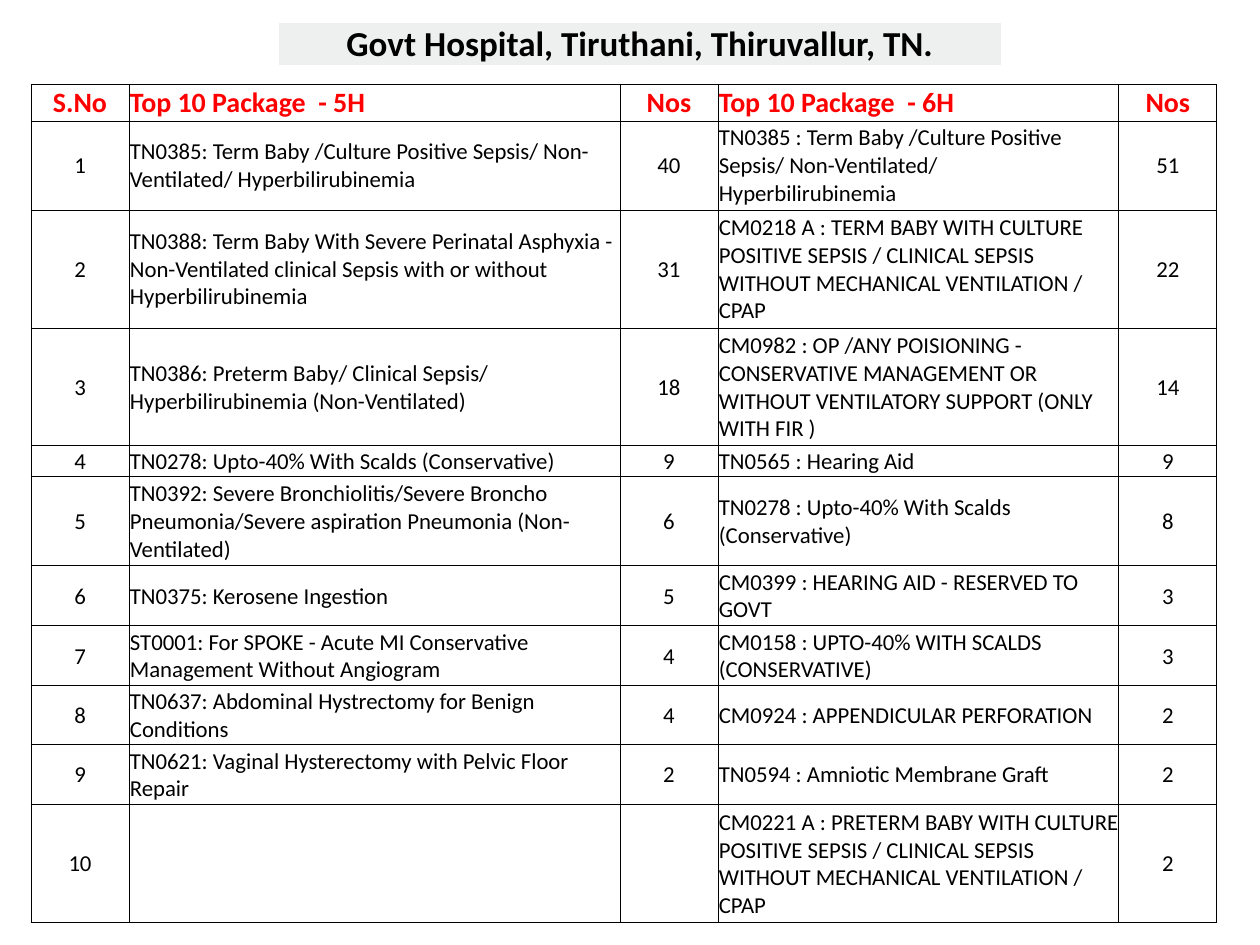
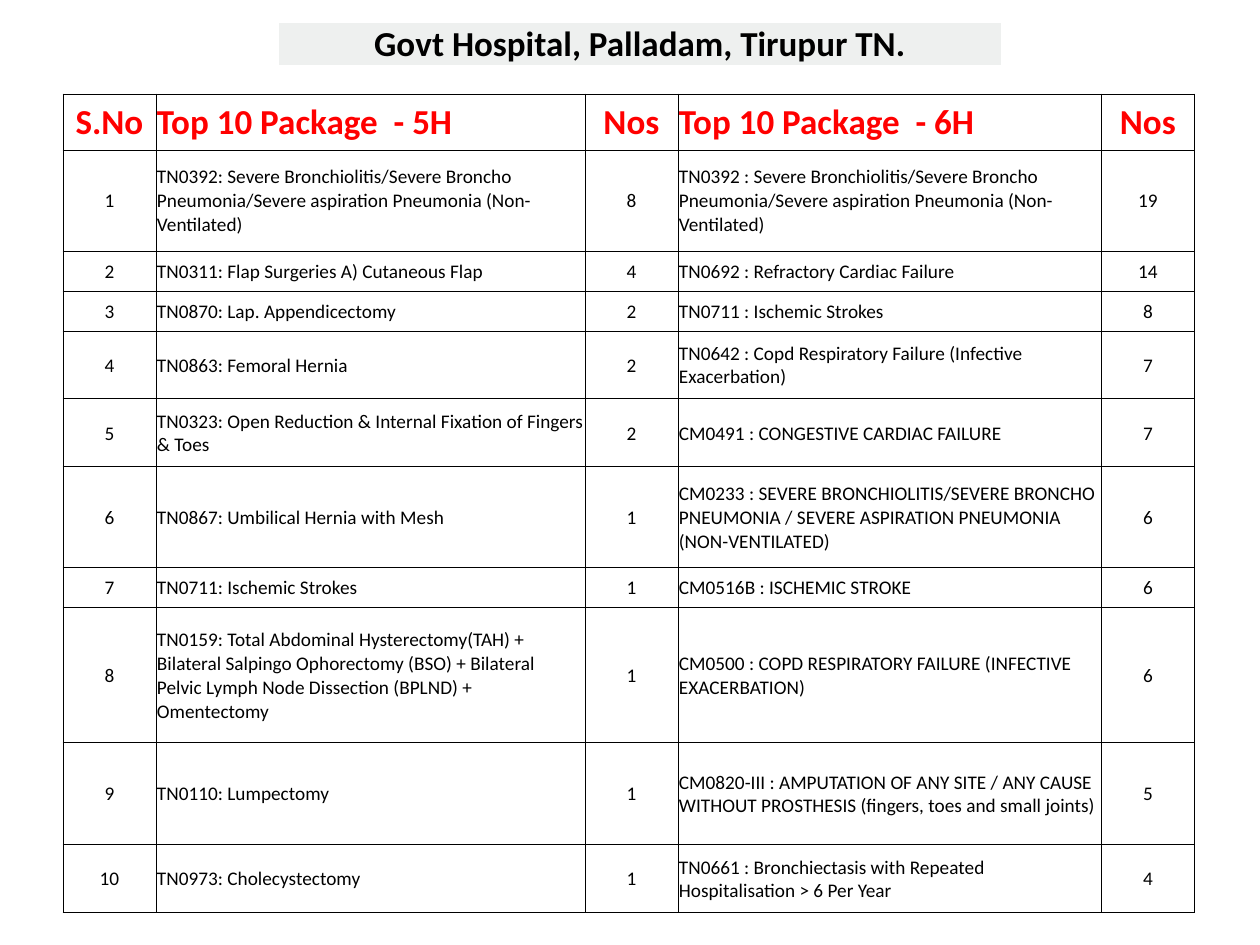
from lxml.etree import SubElement
from pptx import Presentation
from pptx.dml.color import RGBColor
from pptx.enum.text import MSO_ANCHOR, PP_ALIGN
from pptx.oxml.ns import qn
from pptx.util import Pt

PX = 914400 / 126
FONT = "Calibri"
BLACK = RGBColor(0x00, 0x00, 0x00)
WHITE = RGBColor(0xFF, 0xFF, 0xFF)
RED = RGBColor(0xFF, 0x00, 0x00)
TITLE_BAND = RGBColor(0xEE, 0xF0, 0xEF)

HEADER = ("S.No", "Top 10 Package  - 5H", "Nos", "Top 10 Package  - 6H", "Nos")
PACKAGE_COLUMNS = (1, 3)

HOSPITALS = [
    {
        "title": "Govt Hospital, Tiruthani, Thiruvallur, TN.",
        "corner": (31, 84),
        "columns": (98, 491, 98, 401, 98),
        "rows": (37, 89, 118, 118, 31, 89, 60, 60, 59, 60, 118),
        "header_size": 16,
        "body_size": 13,
        "packages": [
            ("TN0385: Term Baby /Culture Positive Sepsis/ Non-Ventilated/ Hyperbilirubinemia", 40,
             "TN0385 : Term Baby /Culture Positive Sepsis/ Non-Ventilated/ Hyperbilirubinemia", 51),
            ("TN0388: Term Baby With Severe Perinatal Asphyxia - Non-Ventilated clinical Sepsis "
             "with or without Hyperbilirubinemia", 31,
             "CM0218 A : TERM BABY WITH CULTURE POSITIVE SEPSIS / CLINICAL SEPSIS "
             "WITHOUT MECHANICAL VENTILATION / CPAP", 22),
            ("TN0386: Preterm Baby/ Clinical Sepsis/ Hyperbilirubinemia (Non-Ventilated)", 18,
             "CM0982 : OP /ANY POISIONING - CONSERVATIVE MANAGEMENT OR "
             "WITHOUT VENTILATORY SUPPORT (ONLY WITH FIR )", 14),
            ("TN0278: Upto-40% With Scalds (Conservative)", 9,
             "TN0565 : Hearing Aid", 9),
            ("TN0392: Severe Bronchiolitis/Severe Broncho Pneumonia/Severe aspiration "
             "Pneumonia (Non-Ventilated)", 6,
             "TN0278 : Upto-40% With Scalds (Conservative)", 8),
            ("TN0375: Kerosene Ingestion", 5,
             "CM0399 : HEARING AID - RESERVED TO GOVT", 3),
            ("ST0001: For SPOKE - Acute MI Conservative Management Without Angiogram", 4,
             "CM0158 : UPTO-40% WITH SCALDS (CONSERVATIVE)", 3),
            ("TN0637: Abdominal Hystrectomy for Benign Conditions", 4,
             "CM0924 : APPENDICULAR PERFORATION", 2),
            ("TN0621: Vaginal Hysterectomy with Pelvic Floor Repair", 2,
             "TN0594 : Amniotic Membrane Graft", 2),
            ("", "",
             "CM0221 A : PRETERM BABY WITH CULTURE POSITIVE SEPSIS / CLINICAL SEPSIS "
             "WITHOUT MECHANICAL VENTILATION / CPAP", 2),
        ],
    },
    {
        "title": "Govt Hospital, Palladam, Tirupur TN.",
        "corner": (63, 94),
        "columns": (93, 429, 93, 423, 94),
        "rows": (56, 101, 40, 40, 68, 68, 101, 40, 135, 102, 68),
        "header_size": 20,
        "body_size": 11,
        "packages": [
            ("TN0392: Severe Bronchiolitis/Severe Broncho Pneumonia/Severe aspiration "
             "Pneumonia (Non-Ventilated)", 8,
             "TN0392 : Severe Bronchiolitis/Severe Broncho Pneumonia/Severe aspiration "
             "Pneumonia (Non-Ventilated)", 19),
            ("TN0311: Flap Surgeries A) Cutaneous Flap", 4,
             "TN0692 : Refractory Cardiac Failure", 14),
            ("TN0870: Lap. Appendicectomy", 2,
             "TN0711 : Ischemic Strokes", 8),
            ("TN0863: Femoral Hernia", 2,
             "TN0642 : Copd Respiratory Failure (Infective Exacerbation)", 7),
            ("TN0323: Open Reduction & Internal Fixation of Fingers & Toes", 2,
             "CM0491 : CONGESTIVE CARDIAC FAILURE", 7),
            ("TN0867: Umbilical Hernia with Mesh", 1,
             "CM0233 : SEVERE BRONCHIOLITIS/SEVERE BRONCHO PNEUMONIA / "
             "SEVERE ASPIRATION PNEUMONIA (NON-VENTILATED)", 6),
            ("TN0711: Ischemic Strokes", 1,
             "CM0516B : ISCHEMIC STROKE", 6),
            ("TN0159: Total Abdominal Hysterectomy(TAH) + Bilateral Salpingo Ophorectomy (BSO) "
             "+ Bilateral Pelvic Lymph Node Dissection (BPLND) + Omentectomy", 1,
             "CM0500 : COPD RESPIRATORY FAILURE (INFECTIVE EXACERBATION)", 6),
            ("TN0110: Lumpectomy", 1,
             "CM0820-III : AMPUTATION OF ANY SITE / ANY CAUSE WITHOUT PROSTHESIS "
             "(fingers, toes and small joints)", 5),
            ("TN0973: Cholecystectomy", 1,
             "TN0661 : Bronchiectasis with Repeated Hospitalisation > 6 Per Year", 4),
        ],
    },
]


def add_plain_table(page, corner, columns, rows):
    """Add an unbanded table whose corner, column widths and row heights are in px."""
    lengths = [round(length * PX) for length in (*corner, sum(columns), sum(rows))]
    table = page.shapes.add_table(len(rows), len(columns), *lengths).table
    table.first_row = table.horz_banding = False
    for column, width in zip(table.columns, columns):
        column.width = round(width * PX)
    for row, height in zip(table.rows, rows):
        row.height = round(height * PX)
    return table


def fill_cell(cell, text, size, color, bold, align, anchor, fill, border, border_width):
    cell.margin_left = cell.margin_right = cell.margin_top = round(PX)
    cell.margin_bottom = 0
    cell.vertical_anchor = anchor
    properties = cell._tc.get_or_add_tcPr()
    for side in ("lnL", "lnR", "lnT", "lnB"):
        line = SubElement(properties, qn(f"a:{side}"), w=str(Pt(border_width)))
        solid = SubElement(line, qn("a:solidFill"))
        SubElement(solid, qn("a:srgbClr"), val=str(border))
    cell.fill.solid()
    cell.fill.fore_color.rgb = fill
    if text == "":
        return
    paragraph = cell.text_frame.paragraphs[0]
    paragraph.alignment = align
    span = paragraph.add_run()
    span.text = str(text)
    span.font.name = FONT
    span.font.size = Pt(size)
    span.font.bold = bold
    span.font.color.rgb = color


deck = Presentation()
deck.slide_width = round(1260 * PX)
deck.slide_height = round(945 * PX)

for hospital in HOSPITALS:
    page = deck.slides.add_slide(deck.slide_layouts[6])

    title = add_plain_table(page, (278, 22), (724,), (42,))
    fill_cell(title.cell(0, 0), hospital["title"], 20, BLACK, True,
              PP_ALIGN.CENTER, MSO_ANCHOR.BOTTOM, TITLE_BAND, WHITE, 1)

    table = add_plain_table(page, hospital["corner"], hospital["columns"], hospital["rows"])
    numbered = [(number, *package) for number, package in enumerate(hospital["packages"], 1)]
    for row, values in enumerate([HEADER, *numbered]):
        is_header = row == 0
        size = hospital["header_size"] if is_header else hospital["body_size"]
        color = RED if is_header else BLACK
        for column, value in enumerate(values):
            align = PP_ALIGN.LEFT if column in PACKAGE_COLUMNS else PP_ALIGN.CENTER
            fill_cell(table.cell(row, column), value, size, color, is_header,
                      align, MSO_ANCHOR.MIDDLE, WHITE, BLACK, 0.5)

deck.save("out.pptx")
